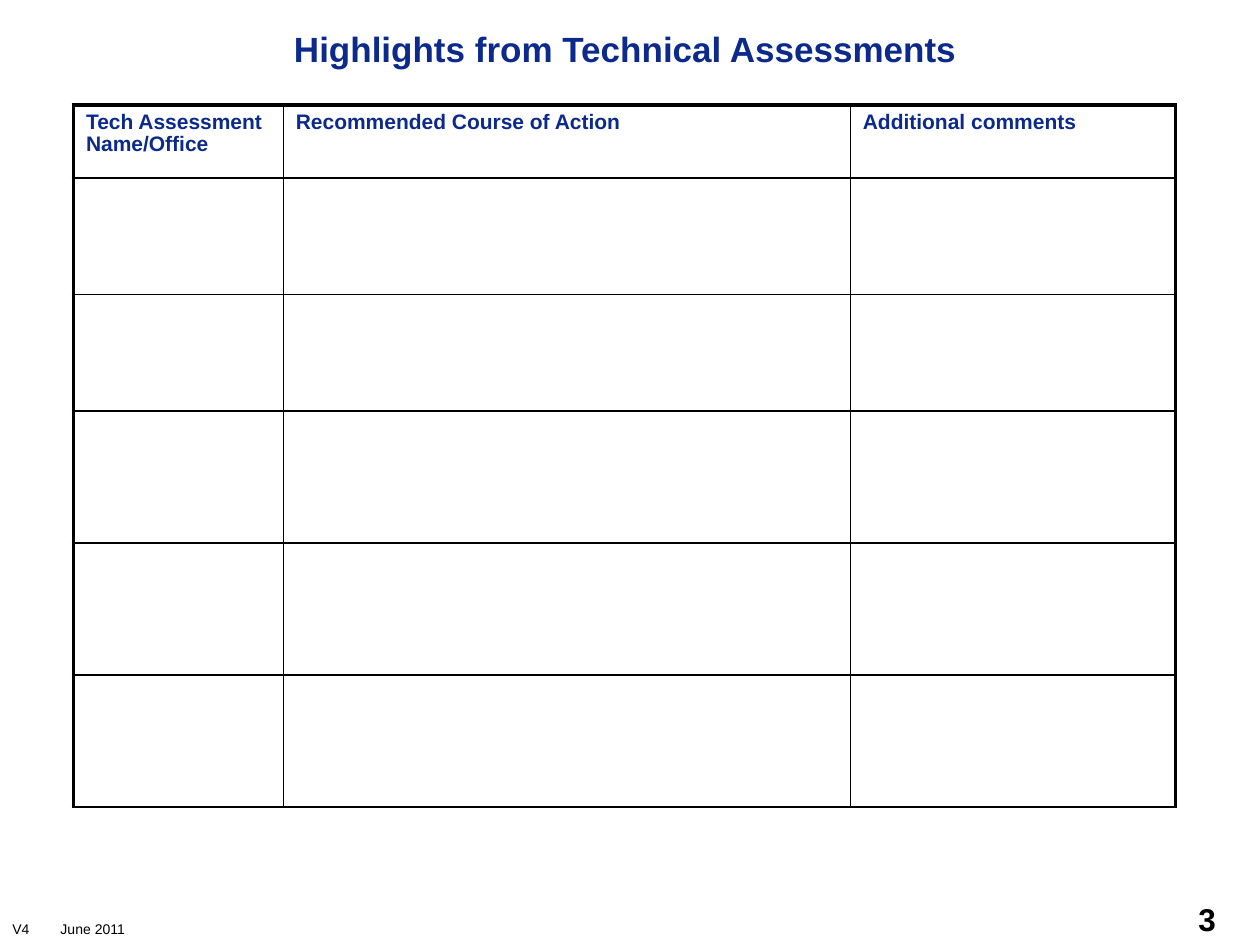
from lxml.etree import SubElement
from pptx import Presentation
from pptx.dml.color import RGBColor
from pptx.enum.text import MSO_ANCHOR, PP_ALIGN
from pptx.oxml.ns import qn
from pptx.util import Cm, Pt

COLORS = {"navy": "0C2A8C", "black": "000000"}
FONT = "Arial"


def style(p, size, color, bold):
    p.font.name = FONT
    p.font.size = Pt(size)
    p.font.bold = bold
    p.font.color.rgb = RGBColor.from_string(COLORS[color])


def add_border(cell, side, width):
    """Draw one edge of a cell; side is L, R, T or B, width is in points."""
    ln = SubElement(cell._tc.get_or_add_tcPr(), qn(f"a:ln{side}"), w=str(Pt(width)))
    fill = SubElement(ln, qn("a:solidFill"))
    SubElement(fill, qn("a:srgbClr"), val=COLORS["black"])


prs = Presentation()
prs.slide_width, prs.slide_height = Cm(25.4), Cm(19.05)
s = prs.slides.add_slide(prs.slide_layouts[6])

# Title, footer and page number
texts = [
    ("Highlights from Technical Assessments", (0.64, 0.43, 23.93, 1.9),
     20, "navy", True, PP_ALIGN.CENTER, MSO_ANCHOR.TOP),
    ("V4\tJune 2011", (0, 18.42, 8.05, 0.63),
     8, "black", False, PP_ALIGN.LEFT, MSO_ANCHOR.MIDDLE),
    ("3", (19.48, 17.98, 5.28, 1.07),
     18, "black", True, PP_ALIGN.RIGHT, MSO_ANCHOR.MIDDLE),
]
for text, box, size, color, bold, align, anchor in texts:
    tf = s.shapes.add_textbox(*[Cm(v) for v in box]).text_frame
    tf.word_wrap = True
    tf.vertical_anchor = anchor
    p = tf.paragraphs[0]
    p.text = text
    p.alignment = align
    if "\t" in text:
        tabs = SubElement(p._p.get_or_add_pPr(), qn("a:tabLst"))
        SubElement(tabs, qn("a:tab"), pos=str(Cm(0.97)), algn="l")
    style(p, size, color, bold)

# Assessment table
headers = ["Tech Assessment Name/Office", "Recommended Course of Action",
           "Additional comments"]
col_widths = [4.23, 11.43, 6.56]
row_heights = [1.47, 2.35, 2.35, 2.66, 2.66, 2.66]
n_rows, n_cols = len(row_heights), len(col_widths)

table = s.shapes.add_table(n_rows, n_cols, Cm(1.48), Cm(2.12),
                           Cm(sum(col_widths)), Cm(sum(row_heights))).table
table.first_row = table.horz_banding = False
for column, width in zip(table.columns, col_widths):
    column.width = Cm(width)
for row, height in zip(table.rows, row_heights):
    row.height = Cm(height)

for i in range(n_rows):
    for j in range(n_cols):
        cell = table.cell(i, j)
        add_border(cell, "L", 2.25 if j == 0 else 1)
        add_border(cell, "R", 2.25 if j == n_cols - 1 else 1)
        add_border(cell, "T", 2.25 if i == 0 else 1)
        add_border(cell, "B", 1)
        cell.fill.background()
        p = cell.text_frame.paragraphs[0]
        if i == 0:
            p.text = headers[j]
            p.line_spacing = 0.95
        style(p, 12, "navy", True)

prs.save("out.pptx")
